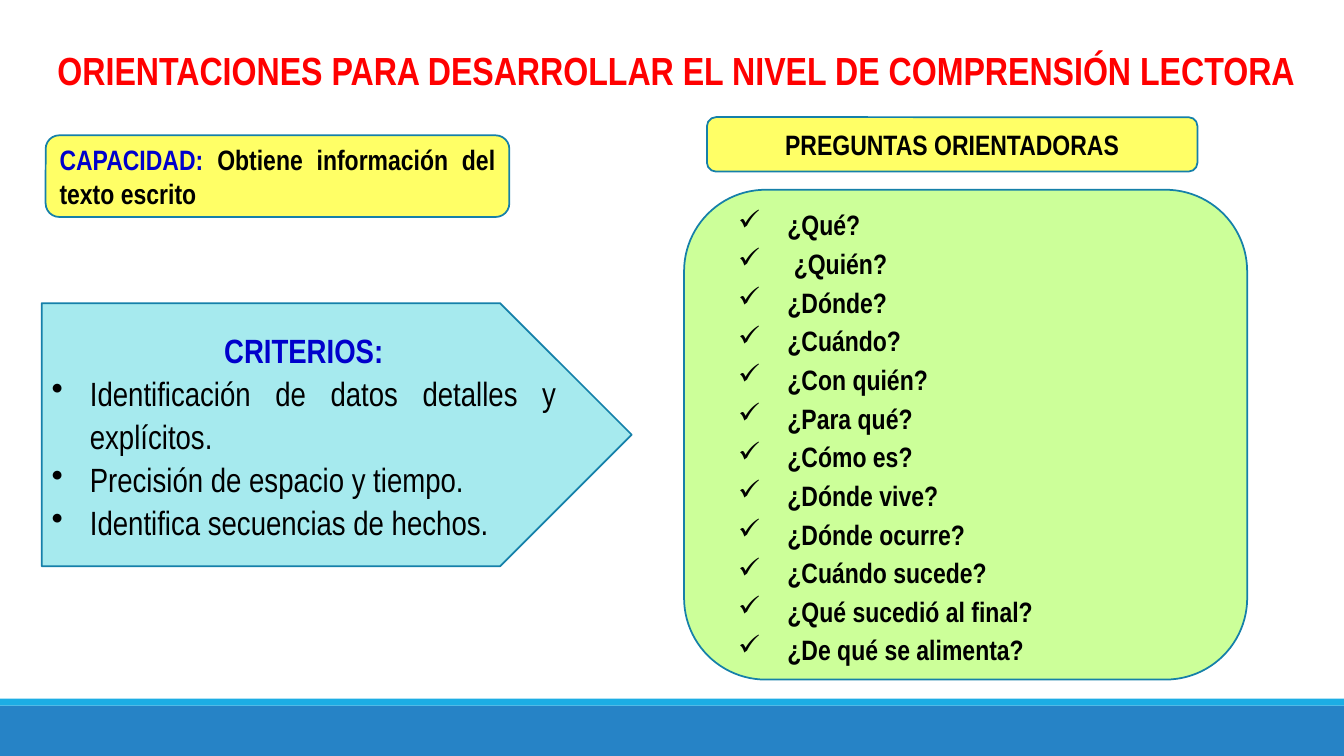
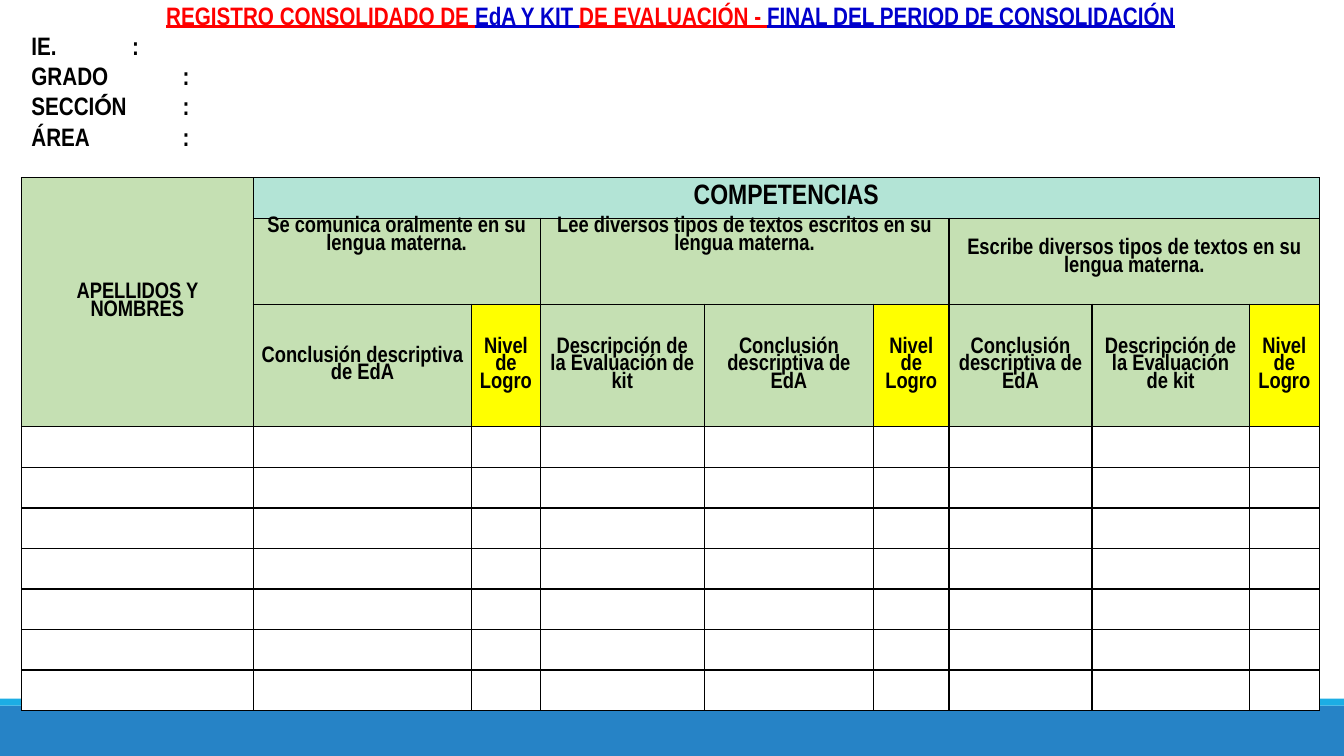
from dataclasses import dataclass

from lxml.etree import SubElement
from pptx import Presentation
from pptx.dml.color import RGBColor
from pptx.enum.shapes import MSO_SHAPE as Shape
from pptx.enum.text import MSO_ANCHOR as Anchor
from pptx.enum.text import MSO_AUTO_SIZE as AutoSize
from pptx.enum.text import PP_ALIGN as Align
from pptx.oxml import parse_xml
from pptx.oxml.ns import nsdecls, qn
from pptx.util import Emu, Inches, Pt

RED = RGBColor(0xFF, 0x00, 0x00)
NAVY = RGBColor(0x00, 0x00, 0xCC)
BLACK = RGBColor(0x00, 0x00, 0x00)
WHITE = RGBColor(0xFF, 0xFF, 0xFF)
OUTLINE = RGBColor(0x15, 0x80, 0xA9)
BAND = RGBColor(0x26, 0x83, 0xC6)
BAND_EDGE = RGBColor(0x1C, 0xAD, 0xE4)
LEMON = RGBColor(0xFF, 0xFF, 0x66)
YELLOW = RGBColor(0xFF, 0xFF, 0x00)
AQUA = RGBColor(0xA6, 0xEA, 0xEE)
LIME = RGBColor(0xCC, 0xFF, 0x99)
SAGE = RGBColor(0xC5, 0xE0, 0xB3)
MINT = RGBColor(0xB3, 0xE4, 0xD6)

FONT = "Arial Narrow"
TITLE_ONLY = 5


@dataclass
class Piece:
    """A stretch of text in one format."""
    text: str
    color: RGBColor = BLACK
    bold: bool = True
    underline: bool = False
    font: str = FONT


@dataclass
class Line:
    """A paragraph; hang is the bullet's left margin and indent in inches."""
    pieces: list
    align: Align = Align.CENTER
    spacing: float = 1.0
    bullet: str = ""
    hang: tuple = (0, 0)


class Deck:
    def __init__(self):
        self.prs = Presentation()
        self.prs.slide_width = Inches(13.333)
        self.prs.slide_height = Inches(7.5)
        self.layout = self.prs.slide_layouts[TITLE_ONLY]
        self.slide = None

    def new_slide(self):
        self.slide = self.prs.slides.add_slide(self.layout)

    def area(self, left, top, width, height):
        """Turn percentages of the slide's size into lengths."""
        across, down = self.prs.slide_width / 100, self.prs.slide_height / 100
        return (Emu(round(left * across)), Emu(round(top * down)),
                Emu(round(width * across)), Emu(round(height * down)))

    def set_lines(self, frame, lines, size, anchor=Anchor.MIDDLE):
        frame.word_wrap = True
        frame.vertical_anchor = anchor
        for number, line in enumerate(lines):
            paragraph = frame.add_paragraph() if number else frame.paragraphs[0]
            paragraph.alignment = line.align
            paragraph.line_spacing = line.spacing
            for piece in line.pieces:
                run = paragraph.add_run()
                run.text = piece.text
                font = run.font
                font.name, font.size = piece.font, Pt(size)
                font.bold, font.underline = piece.bold, piece.underline
                font.color.rgb = piece.color
            if line.bullet:
                properties = paragraph._p.get_or_add_pPr()
                for key, inches in zip(("marL", "indent"), line.hang):
                    properties.set(key, str(Inches(inches)))
                SubElement(properties, qn("a:buChar")).set("char", line.bullet)

    def title(self, box, line, size, anchor, inset):
        heading = self.slide.shapes.title
        heading.left, heading.top, heading.width, heading.height = self.area(*box)
        frame = heading.text_frame
        frame.auto_size = AutoSize.NONE
        frame.margin_top = frame.margin_bottom = Inches(inset)
        self.set_lines(frame, [line], size, anchor)

    def text(self, box, lines, size):
        frame = self.slide.shapes.add_textbox(*self.area(*box)).text_frame
        self.set_lines(frame, lines, size)

    def panel(self, kind, box, fill, lines=(), size=20, outline=OUTLINE):
        panel = self.slide.shapes.add_shape(kind, *self.area(*box))
        panel.shadow.inherit = False
        panel.fill.solid()
        panel.fill.fore_color.rgb = fill
        if outline is None:
            panel.line.fill.background()
        else:
            panel.line.color.rgb = outline
            panel.line.width = Pt(1.25)
        self.set_lines(panel.text_frame, lines, size)
        return panel

    def footer_bands(self):
        """Draw the bands once and hand them to the shared layout."""
        bands = [((0, 93.33, 100, 6.67), BAND), ((0, 92.4, 100, 0.93), BAND_EDGE)]
        for number, (box, fill) in enumerate(bands):
            band = self.panel(Shape.RECTANGLE, box, fill, outline=None).element
            band.nvSpPr.cNvPr.set("id", str(100 + number))
            self.layout.shapes.element.insert(2 + number, band)

    def table(self, box, columns, rows):
        """Add an empty ruled table; columns and rows are relative sizes."""
        left, top, width, height = self.area(*box)
        table = self.slide.shapes.add_table(
            len(rows), len(columns), left, top, width, height).table
        table.first_row = table.horz_banding = False
        for column, share in zip(table.columns, columns):
            column.width = Emu(round(width * share / sum(columns)))
        for row, share in zip(table.rows, rows):
            row.height = Emu(round(height * share / sum(rows)))
        for cell in table.iter_cells():
            cell.margin_left = cell.margin_right = Inches(0.07)
            cell.margin_top = cell.margin_bottom = 0
            self.paint(cell, WHITE)
            properties = cell._tc.get_or_add_tcPr()
            for place, side in enumerate("LRTB"):
                properties.insert(place, parse_xml(
                    f'<a:ln{side} {nsdecls("a")} w="12700"><a:solidFill>'
                    f'<a:srgbClr val="{BLACK}"/></a:solidFill></a:ln{side}>'))
        return table

    @staticmethod
    def paint(cell, fill):
        cell.fill.solid()
        cell.fill.fore_color.rgb = fill

    def header(self, table, place, text, fill=SAGE, span=(1, 1), size=16,
               anchor=Anchor.MIDDLE, drop=0):
        """Fill a header cell; drop is the gap in inches above its text."""
        row, column = place
        cell = table.cell(row, column)
        if span != (1, 1):
            cell.merge(table.cell(row + span[0] - 1, column + span[1] - 1))
        self.paint(cell, fill)
        cell.margin_top = Inches(drop)
        self.set_lines(cell.text_frame, [Line([Piece(text)], spacing=0.85)], size)
        cell.vertical_anchor = anchor


def reading_slide(deck):
    deck.new_slide()
    deck.footer_bands()
    heading = "ORIENTACIONES PARA DESARROLLAR EL NIVEL DE COMPRENSIÓN LECTORA"
    deck.title((3.1, 2.3, 94.4, 9.7), Line([Piece(heading, RED)], spacing=1.5),
               28, Anchor.TOP, 0.05)

    capacity = [Piece("CAPACIDAD: ", NAVY), Piece("Obtiene información del texto escrito")]
    deck.panel(Shape.ROUNDED_RECTANGLE, (3.4, 17.9, 34.5, 10.8), LEMON,
               [Line(capacity, Align.JUSTIFY)])
    deck.panel(Shape.ROUNDED_RECTANGLE, (52.6, 15.5, 36.5, 7.2), LEMON,
               [Line([Piece("PREGUNTAS ORIENTADORAS")])])

    criteria = ["Identificación de datos detalles y explícitos.",
                "Precisión de espacio y tiempo.",
                "Identifica secuencias de hechos."]
    deck.panel(Shape.PENTAGON, (3.1, 40.1, 43.9, 34.8), AQUA,
               [Line([Piece("CRITERIOS:", NAVY)], spacing=1.07)]
               + [Line([Piece(criterion, bold=False)], Align.JUSTIFY, 1.07, "•", (0.38, -0.38))
                  for criterion in criteria], 24)

    questions = ["¿Qué?", " ¿Quién?", "¿Dónde?", "¿Cuándo?", "¿Con quién?",
                 "¿Para qué?", "¿Cómo es?", "¿Dónde vive?", "¿Dónde ocurre?",
                 "¿Cuándo sucede?", "¿Qué sucedió al final?", "¿De qué se alimenta?"]
    deck.panel(Shape.ROUNDED_RECTANGLE, (50.9, 25.1, 41.9, 64.8), LIME,
               [Line([Piece(question)], Align.JUSTIFY, 1.15, "✓", (0.69, -0.49))
                for question in questions])


def register_slide(deck):
    deck.new_slide()
    heading = [("REGISTRO CONSOLIDADO DE ", RED), ("EdA Y KIT ", NAVY),
               ("DE EVALUACIÓN - ", RED), ("FINAL DEL PERIOD DE CONSOLIDACIÓN", NAVY)]
    deck.title((1.6, 0, 96.6, 4),
               Line([Piece(text, color, underline=True) for text, color in heading]),
               18, Anchor.MIDDLE, 0)
    fields = [[Piece("IE.")], [Piece("GRADO")],
              [Piece("SECCI"), Piece("Ó", font="Calibri"), Piece("N")], [Piece("ÁREA")]]
    deck.text((1.6, 4, 96.6, 16),
              [Line(field + [Piece("\t\t:")], Align.LEFT) for field in fields], 18)

    columns = [2.3, 2.17, 0.68, 1.63, 1.68, 0.75, 1.42, 1.56, 0.7]
    register = deck.table((1.6, 23.5, 96.6, 70.5), columns, [0.4, 0.85, 1.21] + [0.4] * 7)
    deck.header(register, (0, 0), "APELLIDOS Y NOMBRES", span=(3, 1))
    deck.header(register, (0, 1), "COMPETENCIAS", MINT, (1, 8), 20)

    conclusion = "Conclusión descriptiva de EdA"
    kit = "Descripción de la Evaluación de kit"
    level = "Nivel de Logro"
    competences = [
        ("Se comunica oralmente en su lengua materna.", [conclusion, level], 0),
        ("Lee diversos tipos de textos escritos en su lengua materna.",
         [kit, conclusion, level], 0),
        ("Escribe diversos tipos de textos en su lengua materna.",
         [conclusion, kit, level], 0.22),
    ]
    column = 1
    for competence, measures, drop in competences:
        deck.header(register, (1, column), competence, span=(1, len(measures)),
                    anchor=Anchor.TOP, drop=drop)
        for measure in measures:
            deck.header(register, (2, column), measure, YELLOW if measure == level else SAGE)
            column += 1


def main():
    deck = Deck()
    reading_slide(deck)
    register_slide(deck)
    deck.prs.save("out.pptx")


if __name__ == "__main__":
    main()
